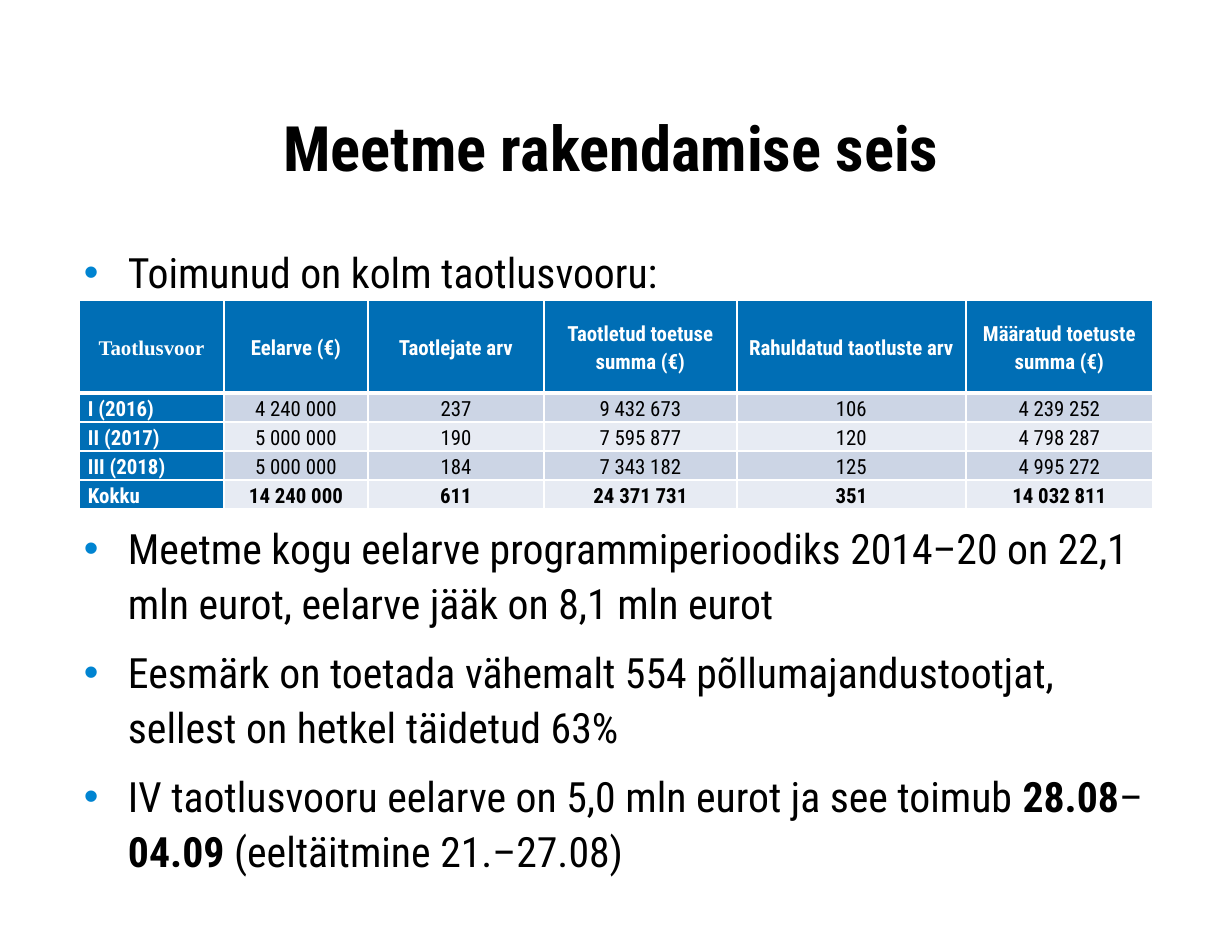
import pptx
import pptx.dml.color
import pptx.enum.text
import pptx.oxml.ns
import pptx.util
from lxml import etree

PX = 914400 / 125.2  # EMU in one px
COLORS = {"text": "000000", "white": "FFFFFF", "header": "006EB5",
          "band": "CCD5E5", "light": "E7EBF3", "bullet": "0084D1"}
FONT = "Roboto Condensed"
ALIGN = pptx.enum.text.PP_ALIGN
MIDDLE = pptx.enum.text.MSO_ANCHOR.MIDDLE


def px(n):
    return pptx.util.Emu(round(n * PX))


def rgb(name):
    return pptx.dml.color.RGBColor.from_string(COLORS[name])


def add_xml(parent, tag, **attrs):
    el = etree.SubElement(parent, pptx.oxml.ns.qn(tag))
    for key, value in attrs.items():
        el.set(key, str(value))
    return el


class Deck:
    def __init__(self, width, height):
        self.prs = pptx.Presentation()
        self.prs.slide_width, self.prs.slide_height = px(width), px(height)
        self.s = self.prs.slides.add_slide(self.prs.slide_layouts[6])

    def format(self, obj, values):
        for name, value in values.items():
            setattr(obj, name, value)

    def run(self, p, text, size, bold=False, color="text", font=FONT):
        r = p.add_run()
        r.text = text
        self.format(r.font, {"name": font, "size": pptx.util.Pt(size), "bold": bold})
        r.font.color.rgb = rgb(color)

    def text_box(self, x, y, w, h, **frame):
        tf = self.s.shapes.add_textbox(px(x), px(y), px(w), px(h)).text_frame
        self.format(tf, {"word_wrap": True, "margin_left": 0, "margin_top": 0,
                         "margin_right": 0, "margin_bottom": 0, **frame})
        return tf

    def title(self, text, *box):
        tf = self.text_box(*box, margin_top=px(8), vertical_anchor=MIDDLE)
        p = tf.paragraphs[0]
        self.format(p, {"alignment": ALIGN.CENTER, "line_spacing": 0.88})
        self.run(p, text, 36, bold=True)

    def bullets(self, items, gap, *box):
        """Bulleted text with a gap in points after the first item."""
        tf = self.text_box(*box)
        for i, parts in enumerate(items):
            p = tf.paragraphs[0] if i == 0 else tf.add_paragraph()
            self.format(p, {"line_spacing": 1.1, "space_after": pptx.util.Pt(8),
                            "space_before": pptx.util.Pt(gap if i == 1 else 0)})
            pPr = p._p.get_or_add_pPr()
            pPr.set("marL", str(px(59)))
            pPr.set("indent", str(px(-44)))
            color = add_xml(pPr, "a:buClr")
            add_xml(color, "a:srgbClr", val=COLORS["bullet"])
            add_xml(pPr, "a:buFont", typeface="Arial")
            add_xml(pPr, "a:buChar", char="•")
            for text, bold in parts:
                self.run(p, text, 24, bold)

    def borders(self, cell, top, bottom):
        tcPr = cell._tc.get_or_add_tcPr()
        for side, width in (("L", 1), ("R", 1), ("T", top), ("B", bottom)):
            ln = add_xml(tcPr, "a:ln" + side, w=pptx.util.Pt(width))
            fill = add_xml(ln, "a:solidFill")
            add_xml(fill, "a:srgbClr", val=COLORS["white"])

    def cell(self, cell, text, fill, align, **style):
        self.format(cell, {"margin_left": px(9), "margin_right": px(9), "margin_top": 0,
                           "margin_bottom": 0, "vertical_anchor": MIDDLE})
        cell.fill.solid()
        cell.fill.fore_color.rgb = rgb(fill)
        p = cell.text_frame.paragraphs[0]
        self.format(p, {"alignment": align, "line_spacing": 1.15})
        self.run(p, text, 12, **style)

    def table(self, data, x, y, cols, rows):
        frame = self.s.shapes.add_table(len(rows), len(cols), px(x), px(y),
                                        px(sum(cols)), px(sum(rows)))
        table = frame.table
        self.format(table, {"first_row": False, "horz_banding": False})
        for column, width in zip(table.columns, cols):
            column.width = px(width)
        for i, (height, values) in enumerate(zip(rows, data)):
            table.rows[i].height = px(height)
            for j, text in enumerate(values):
                cell = table.cell(i, j)
                self.borders(cell, 3 if i == 1 else 1, 3 if i == 0 else 1)
                head = i == 0 or j == 0
                fill = "header" if head else "band" if i % 2 else "light"
                self.cell(cell, text, fill,
                          ALIGN.LEFT if j == 0 and i > 0 else ALIGN.CENTER,
                          bold=head or i == len(rows) - 1,
                          color="white" if head else "text",
                          font="Times New Roman" if i == j == 0 else FONT)


ITEMS = [
    [("Toimunud on kolm taotlusvooru:", False)],
    [("Meetme kogu eelarve programmiperioodiks 2014–20 on 22,1 mln eurot, "
      "eelarve jääk on 8,1 mln eurot", False)],
    [("Eesmärk on toetada vähemalt 554 põllumajandustootjat, "
      "sellest on hetkel täidetud 63%", False)],
    [("IV taotlusvooru eelarve on 5,0 mln eurot ja see toimub ", False),
     ("28.08", True), ("–", False), ("04.09", True),
     (" (eeltäitmine 21.–27.08)", False)],
]
ROUNDS = [
    ["Taotlusvoor", "Eelarve (€)", "Taotlejate arv", "Taotletud toetuse summa (€)",
     "Rahuldatud taotluste arv", "Määratud toetuste summa (€)"],
    ["I (2016)", "4 240 000", "237", "9 432 673", "106", "4 239 252"],
    ["II (2017)", "5 000 000", "190", "7 595 877", "120", "4 798 287"],
    ["III (2018)", "5 000 000", "184", "7 343 182", "125", "4 995 272"],
    ["Kokku", "14 240 000", "611", "24 371 731", "351", "14 032 811"],
]


def main():
    deck = Deck(1232, 936)
    # Heading
    deck.title("Meetme rakendamise seis", 69, 74, 1084, 148)
    # Bullets, with room for the table after the first one
    deck.bullets(ITEMS, 119, 69, 242, 1084, 618)
    # Application rounds
    deck.table(ROUNDS, 79, 300, [145, 144, 176, 193, 229, 187], [93] + [29] * 4)
    deck.prs.save("out.pptx")


if __name__ == "__main__":
    main()
